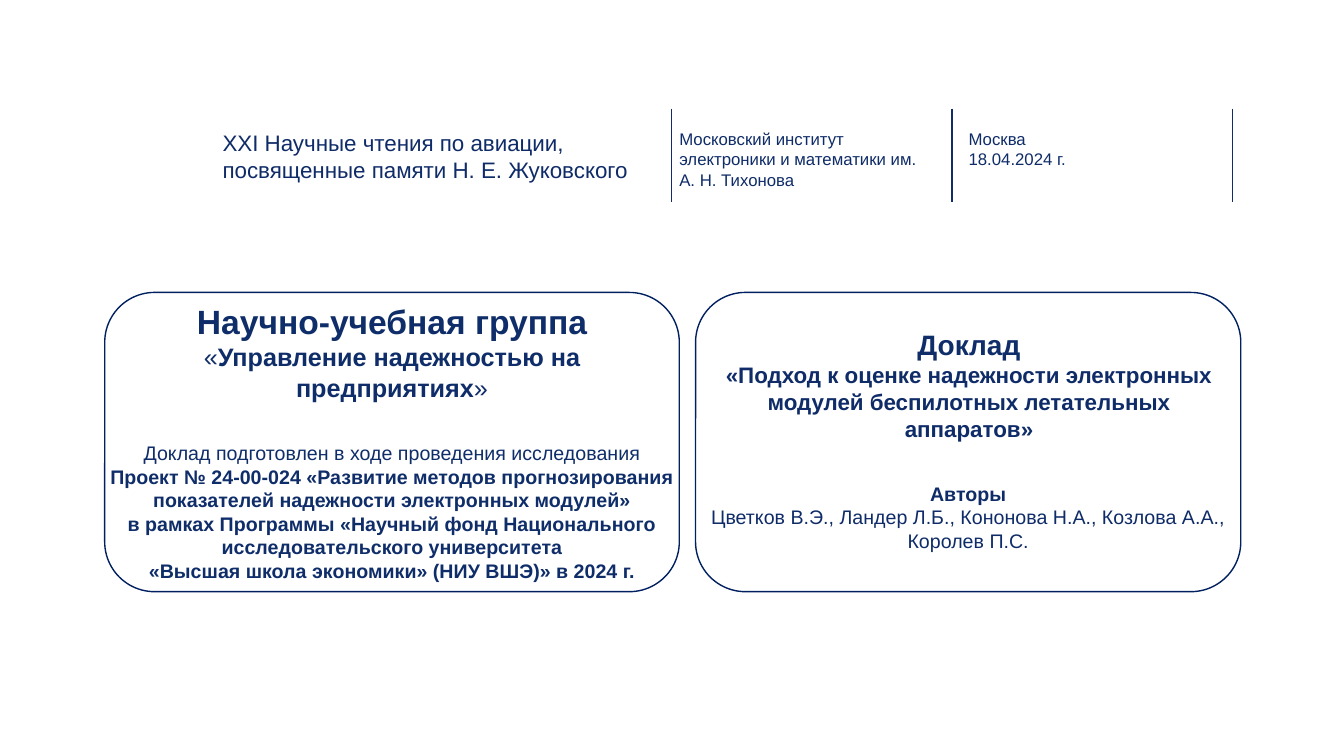
from dataclasses import dataclass

from pptx import Presentation
from pptx import util as u
from pptx.dml.color import RGBColor
from pptx.enum import shapes, text
from pptx.oxml.ns import qn
from lxml import etree

COLORS = {"title": "0E2D69", "body": "0F2C68", "rule": "102D69", "frame": "002060"}
RULE_X, RULE_STEP, RULE_TOP, RULE_BOTTOM = 16.92, 7.07, 2.74, 5.08
FRAME_TOP, FRAME_HEIGHT = 7.37, 7.54


@dataclass
class Run:
    text: str
    size: float
    bold: bool = False
    color: str = "body"


@dataclass
class Para:
    runs: list[Run]
    before: float = 0


@dataclass
class TextBlock:
    left: float
    top: float
    width: float
    height: float
    paras: list[Para]
    centered: bool = False
    middle: bool = False


@dataclass
class Frame:
    left: float
    width: float


def line(content: str, size: float, *, bold: bool = False,
         color: str = "body", before: float = 0) -> Para:
    return Para([Run(content, size, bold, color)], before)


def rgb(name: str) -> RGBColor:
    return RGBColor.from_string(COLORS[name])


def add_text(s, block: TextBlock) -> None:
    sp = s.shapes.add_textbox(*map(u.Cm, (block.left, block.top, block.width, block.height)))
    tf = sp.text_frame
    tf.word_wrap = True
    tf.margin_left = tf.margin_right = tf.margin_top = tf.margin_bottom = 0
    tf.vertical_anchor = text.MSO_ANCHOR.MIDDLE if block.middle else text.MSO_ANCHOR.TOP
    for i, para in enumerate(block.paras):
        p = tf.add_paragraph() if i else tf.paragraphs[0]
        p.alignment = text.PP_ALIGN.CENTER if block.centered else text.PP_ALIGN.LEFT
        p.space_before = u.Pt(para.before)
        for run in para.runs:
            r = p.add_run()
            r.text = run.text
            r.font.name = "Arial"
            r.font.size = u.Pt(run.size)
            r.font.bold = run.bold
            r.font.color.rgb = rgb(run.color)


def add_frame(s, frame: Frame) -> None:
    sp = s.shapes.add_shape(
        shapes.MSO_SHAPE.ROUNDED_RECTANGLE,
        *map(u.Cm, (frame.left, FRAME_TOP, frame.width, FRAME_HEIGHT)))
    sp.shadow.inherit = False
    sp.fill.background()
    sp.line.color.rgb = rgb("frame")
    sp.line.width = u.Pt(1)


def add_rule(s, x: float) -> None:
    cx = s.shapes.add_connector(
        shapes.MSO_CONNECTOR.STRAIGHT,
        *map(u.Cm, (x, RULE_TOP, x, RULE_BOTTOM)))
    cx.line.color.rgb = rgb("rule")
    cx.line.width = u.Pt(1)
    etree.SubElement(cx._element.spPr, qn("a:effectLst"))


FRAMES = [Frame(2.64, 14.48), Frame(17.53, 13.74)]

BLOCKS = [
    TextBlock(5.61, 3.25, 10.9, 2.87, [
        line("XXI Научные чтения по авиации, посвященные памяти Н. Е. Жуковского", 16),
    ]),
    TextBlock(17.12, 3.25, 6.6, 1.3, [
        line("Московский институт электроники и математики им.", 12),
        line("А. Н. Тихонова", 12),
    ]),
    TextBlock(24.41, 3.25, 6.17, 1.3, [
        line("Москва", 12),
        line("18.04.2024 г.", 12),
    ]),
    TextBlock(2.74, 7.54, 14.28, 7.19, [
        line("Научно-учебная группа", 24, bold=True, color="title"),
        Para([
            Run("«", 18, color="title"),
            Run("Управление надежностью на предприятиях", 18, True, "title"),
            Run("»", 18, color="title"),
        ]),
        line("Доклад подготовлен в ходе проведения исследования", 14, color="title", before=28),
        line("Проект № 24-00-024 «Развитие методов прогнозирования показателей "
             "надежности электронных модулей»", 14, bold=True, color="title"),
        line("в рамках Программы «Научный фонд Национального исследовательского "
             "университета", 14, bold=True, color="title"),
        line("«Высшая школа экономики» (НИУ ВШЭ)» в 2024 г.", 14, bold=True, color="title"),
    ], centered=True, middle=True),
    TextBlock(18.11, 8.26, 12.62, 2.9, [
        line("Доклад", 20, bold=True, color="title"),
        Para([
            Run("«", 16, True, "title"),
            Run("Подход к оценке надежности электронных модулей беспилотных "
                "летательных аппаратов", 16, True),
            Run("»", 16, True, "title"),
        ]),
    ], centered=True),
    TextBlock(17.78, 12.14, 13.24, 1.8, [
        line("Авторы", 14, bold=True),
        line("Цветков В.Э., Ландер Л.Б., Кононова Н.А., Козлова А.А., Королев П.С.", 14),
    ], centered=True),
]


def main() -> None:
    prs = Presentation()
    prs.slide_width, prs.slide_height = u.Cm(33.87), u.Cm(19.05)
    s = prs.slides.add_slide(prs.slide_layouts[6])
    for i in range(3):
        add_rule(s, RULE_X + i * RULE_STEP)
    for frame in FRAMES:
        add_frame(s, frame)
    for block in BLOCKS:
        add_text(s, block)
    prs.save("out.pptx")


if __name__ == "__main__":
    main()
